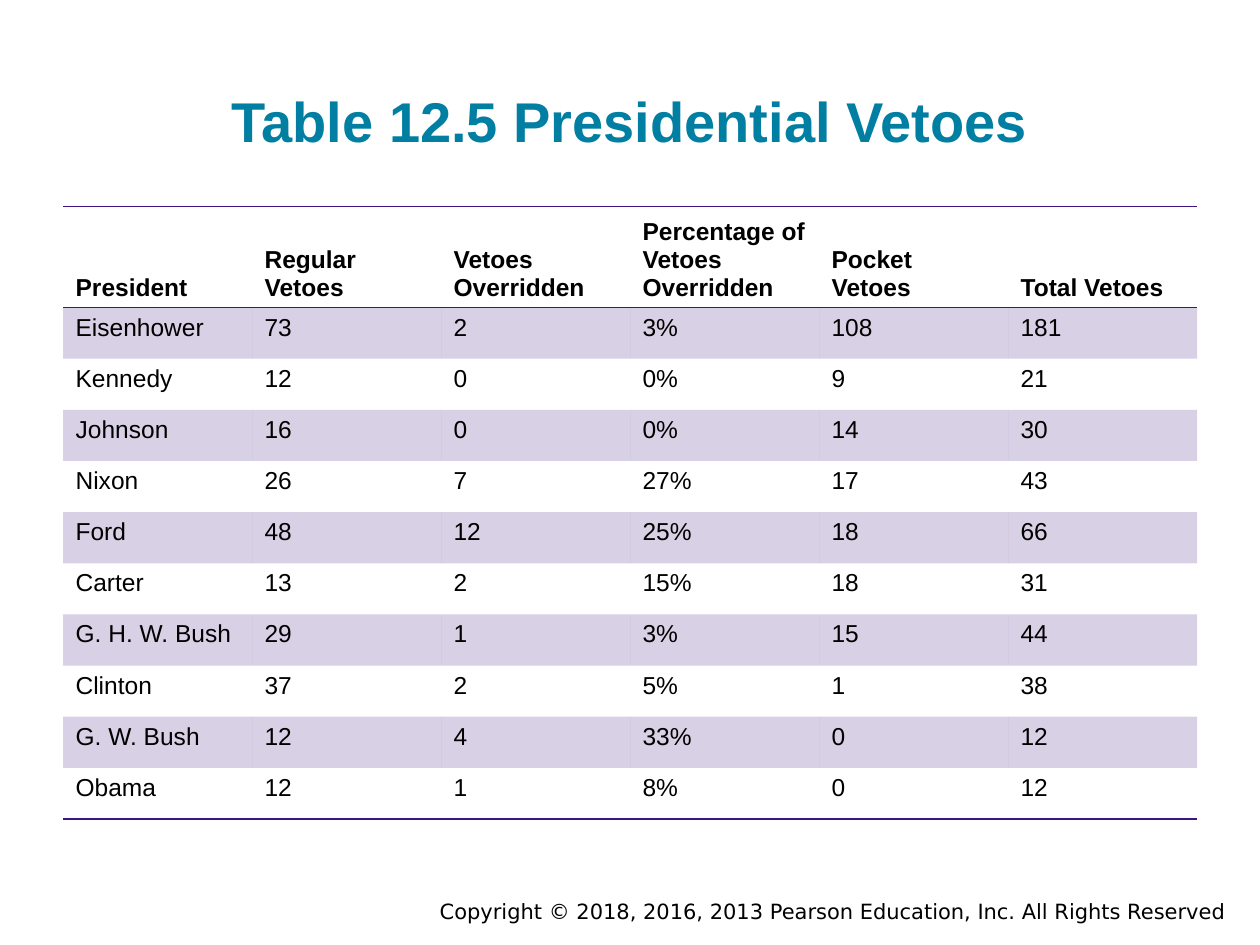
from pptx import Presentation
from pptx.dml.color import RGBColor as Rgb
from pptx.enum.text import MSO_ANCHOR as Anchor, PP_ALIGN as Align
from pptx.oxml.ns import qn
from pptx.util import Inches, Pt
from lxml.etree import SubElement as Sub

COLORS = {"title": "007FA3", "text": "000000", "rule": "3C1581"}
PLAIN = "{2D5ABB26-0587-4C30-8999-92F81FD0307C}"  # no style, no grid
HEAD = ["President", "Regular Vetoes", "Vetoes Overridden",
        "Percentage of Vetoes Overridden", "Pocket Vetoes", "Total Vetoes"]
VETOES = [
    ("Eisenhower", 73, 2, "3%", 108, 181),
    ("Kennedy", 12, 0, "0%", 9, 21),
    ("Johnson", 16, 0, "0%", 14, 30),
    ("Nixon", 26, 7, "27%", 17, 43),
    ("Ford", 48, 12, "25%", 18, 66),
    ("Carter", 13, 2, "15%", 18, 31),
    ("G. H. W. Bush", 29, 1, "3%", 15, 44),
    ("Clinton", 37, 2, "5%", 1, 38),
    ("G. W. Bush", 12, 4, "33%", 0, 12),
    ("Obama", 12, 1, "8%", 0, 12),
]
HEAD_H, BODY_H = 0.76, 4.06


def add_run(para, text, size, color="text", bold=False, face="Arial"):
    run = para.add_run()
    run.text = text
    font = run.font
    font.name, font.size, font.bold = face, Pt(size), bold
    font.color.rgb = Rgb.from_string(COLORS[color])


def add_text(slide, box, text, size, align, anchor, pad, **style):
    frame = slide.shapes.add_textbox(*map(Inches, box)).text_frame
    frame.word_wrap = True
    frame.vertical_anchor = anchor
    frame.margin_top = frame.margin_bottom = Inches(pad)
    para = frame.paragraphs[0]
    para.alignment = align
    add_run(para, text, size, **style)


def add_rule(cell, side):
    """Draw one cell border; call before the fill is set."""
    props = cell._tc.get_or_add_tcPr()
    line = Sub(props, qn(f"a:{side}"), w=str(Pt(1)))
    fill = Sub(line, qn("a:solidFill"))
    Sub(fill, qn("a:srgbClr"), val=COLORS["rule"])


def set_band(cell, shade):
    if not shade:
        cell.fill.background()
        return
    cell.fill.solid()
    cell.fill.fore_color.rgb = Rgb.from_string(COLORS["rule"])
    color = cell._tc.tcPr.find(qn("a:solidFill")).find(qn("a:srgbClr"))
    Sub(color, qn("a:alpha"), val="20000")


def add_grid(slide):
    rows = [HEAD, *VETOES]
    frame = slide.shapes.add_table(
        len(rows), len(HEAD), Inches(0.5), Inches(1.64),
        Inches(9), Inches(HEAD_H + BODY_H))
    for style in frame.element.iter(qn("a:tableStyleId")):
        style.text = PLAIN
    table = frame.table
    table.horz_banding = False
    for r, row in enumerate(rows):
        head, last = r == 0, r == len(VETOES)
        table.rows[r].height = Inches(HEAD_H if head else BODY_H / len(VETOES))
        for c, value in enumerate(row):
            cell = table.cell(r, c)
            cell.vertical_anchor = Anchor.BOTTOM if head else Anchor.TOP
            add_run(cell.text_frame.paragraphs[0], str(value), 14, bold=head)
            if head:
                add_rule(cell, "lnT")
            if head or last:
                add_rule(cell, "lnB")
            set_band(cell, r % 2 == 1)


def main():
    deck = Presentation()
    deck.slide_width, deck.slide_height = Inches(10), Inches(7.5)
    slide = deck.slides.add_slide(deck.slide_layouts[6])

    # Copyright line
    add_text(slide, (2, 7.08, 7.83, 0.3),
             "Copyright © 2018, 2016, 2013 Pearson Education, Inc. All Rights Reserved",
             12, Align.RIGHT, Anchor.TOP, 0.05, face="DejaVu Sans")
    # Title
    add_text(slide, (0.5, 0.46, 9, 0.86), "Table 12.5 Presidential Vetoes",
             32, Align.CENTER, Anchor.BOTTOM, 0.1, color="title", bold=True)
    # Table of vetoes
    add_grid(slide)

    deck.save("out.pptx")


if __name__ == "__main__":
    main()
